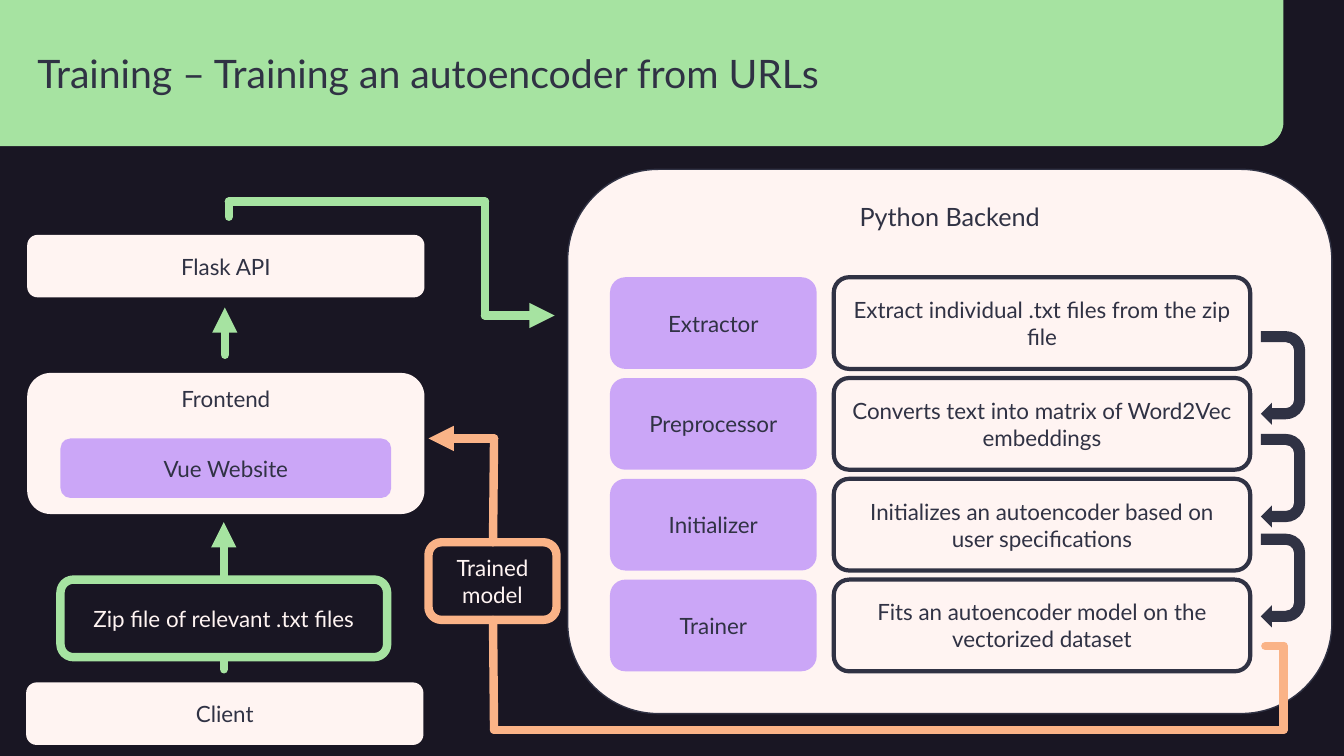
import math

from lxml import etree
from pptx import Presentation
from pptx.dml.color import RGBColor
from pptx.enum.shapes import MSO_CONNECTOR, MSO_SHAPE
from pptx.enum.text import MSO_ANCHOR, PP_ALIGN
from pptx.oxml.ns import qn
from pptx.util import Inches, Pt

ROUNDED = MSO_SHAPE.ROUNDED_RECTANGLE
UTURN = MSO_SHAPE.U_TURN_ARROW
STRAIGHT = MSO_CONNECTOR.STRAIGHT
TOP, MIDDLE = MSO_ANCHOR.TOP, MSO_ANCHOR.MIDDLE
LEFT, CENTER = PP_ALIGN.LEFT, PP_ALIGN.CENTER

FONT = "Lato"
NIGHT, INK, CREAM = "191623", "303244", "FFF4F2"
GREEN, PURPLE, ORANGE = "A6E3A1", "CBA6F7", "FAB387"

STAGES = [
    ("Extractor", "Extract individual .txt files from the zip file"),
    ("Preprocessor", "Converts text into matrix of Word2Vec embeddings"),
    ("Initializer", "Initializes an autoencoder based on user specifications"),
    ("Trainer", "Fits an autoencoder model on the vectorized dataset"),
]
STAGE_TOP, STAGE_STEP, STAGE_HEIGHT = 2.75, 1, 0.91
UTURN_TOPS = (3.53, 4.55, 5.54)


def rgb(hex_color):
    return RGBColor.from_string(hex_color)


def write(shape, text, size=16, color=INK, align=CENTER, anchor=MIDDLE, inset=0.1):
    frame = shape.text_frame
    frame.word_wrap = True
    frame.vertical_anchor = anchor
    frame.margin_left = Inches(inset)
    paragraph = frame.paragraphs[0]
    paragraph.alignment = align
    run = paragraph.add_run()
    run.text = text
    run.font.name = FONT
    run.font.size = Pt(size)
    run.font.color.rgb = rgb(color)


def paint(shape, fill=None, line=None, width=1):
    shape.shadow.inherit = False
    if fill:
        shape.fill.solid()
        shape.fill.fore_color.rgb = rgb(fill)
    else:
        shape.fill.background()
    if line:
        shape.line.color.rgb = rgb(line)
        shape.line.width = Pt(width)
    else:
        shape.line.fill.background()


def add_box(slide, bounds, text, fill=None, line=None, width=1, **text_format):
    box = slide.shapes.add_shape(ROUNDED, *map(Inches, bounds))
    paint(box, fill, line, width)
    write(box, text, **text_format)


def add_route(slide, points, color, arrow=False):
    """Join the points with straight lines; the last may end in an arrowhead."""
    for start, end in zip(points, points[1:]):
        segment = slide.shapes.add_connector(
            STRAIGHT, *map(Inches, (*start, *end)))
        segment.line.color.rgb = rgb(color)
        segment.line.width = Pt(6)
        outline = segment.line._get_or_add_ln()
        outline.set("cap", "rnd")
        etree.SubElement(outline, qn("a:round"))
        if arrow and end == points[-1]:
            etree.SubElement(outline, qn("a:tailEnd"), type="triangle")
        etree.SubElement(segment._element.spPr, qn("a:effectLst"))


def add_banner(slide, title):
    """Title band with only its lower right corner rounded."""
    width, height, radius, steps = 12.73, 1.45, 0.24, 16
    angles = [math.pi / 2 * step / steps for step in range(steps + 1)]
    corner = [(Inches(width - radius + radius * math.cos(angle)),
               Inches(height - radius + radius * math.sin(angle)))
              for angle in angles]
    builder = slide.shapes.build_freeform(0, 0)
    builder.add_line_segments(
        [(Inches(width), 0), *corner, (0, Inches(height))], close=True)
    banner = builder.convert_to_shape()
    paint(banner, GREEN)
    write(banner, title, size=28, align=LEFT, inset=0.37)


def add_uturn(slide, top):
    arrow = slide.shapes.add_shape(
        UTURN, *map(Inches, (12.26, top, 0.93, 0.44)))
    arrow.rotation = 90
    arrow.adjustments[4] = 1
    paint(arrow, INK)


def add_client_side(slide):
    add_box(slide, (0.27, 3.7, 3.94, 1.4), "Frontend", CREAM, anchor=TOP)
    add_box(slide, (0.6, 4.35, 3.28, 0.59), "Vue Website", PURPLE)
    add_box(slide, (0.27, 2.33, 3.94, 0.62), "Flask API", CREAM)
    add_box(slide, (0.26, 6.77, 3.94, 0.62), "Client", CREAM)
    add_box(slide, (0.6, 5.75, 3.24, 0.77), "Zip file of relevant .txt files",
            line=GREEN, width=6, color=CREAM)
    add_route(slide, [(2.22, 6.64), (2.22, 6.52)], GREEN)
    add_route(slide, [(2.22, 5.75), (2.22, 5.18)], GREEN, arrow=True)
    add_route(slide, [(2.23, 3.52), (2.23, 3.05)], GREEN, arrow=True)


def add_backend(slide):
    add_box(slide, (5.63, 1.68, 7.58, 5.4), "Python Backend", CREAM, INK,
            size=18, anchor=TOP)
    for index, (stage, task) in enumerate(STAGES):
        top = STAGE_TOP + index * STAGE_STEP
        add_box(slide, (6.05, top, 2.05, STAGE_HEIGHT), stage, PURPLE)
        add_box(slide, (8.27, top, 4.13, STAGE_HEIGHT), task, line=INK, width=3)
    for top in UTURN_TOPS:
        add_uturn(slide, top)


def add_exchange(slide):
    """Routes between the client side and the backend."""
    add_route(slide, [(2.27, 2.15), (2.27, 2), (4.81, 2), (4.81, 3.13),
                      (5.5, 3.13)], GREEN, arrow=True)
    add_route(slide, [(12.55, 6.41), (12.73, 6.41), (12.73, 7.24),
                      (4.9, 7.24), (4.89, 6.15)], ORANGE)
    add_route(slide, [(4.89, 5.38), (4.9, 4.35), (4.25, 4.35)], ORANGE,
              arrow=True)
    add_box(slide, (4.25, 5.38, 1.27, 0.77), "Trained model",
            line=ORANGE, width=6, color=CREAM)


def main():
    deck = Presentation()
    deck.slide_width, deck.slide_height = Inches(13.33), Inches(7.5)
    slide = deck.slides.add_slide(deck.slide_layouts[6])
    slide.background.fill.solid()
    slide.background.fill.fore_color.rgb = rgb(NIGHT)
    add_banner(slide, "Training – Training an autoencoder from URLs")
    add_client_side(slide)
    add_backend(slide)
    add_exchange(slide)
    deck.save("out.pptx")


if __name__ == "__main__":
    main()
